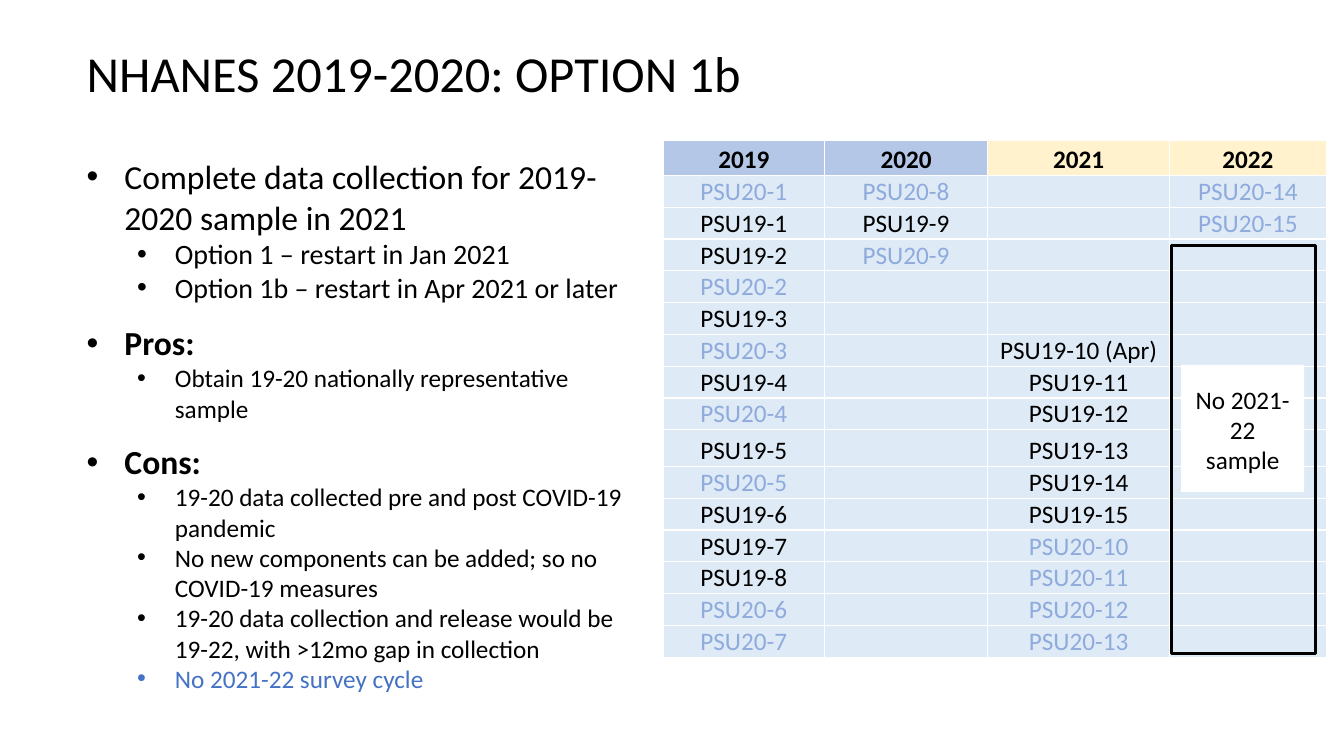
from pptx import Presentation
from pptx.dml.color import RGBColor
from pptx.enum.shapes import MSO_SHAPE
from pptx.enum.text import MSO_ANCHOR, MSO_AUTO_SIZE, PP_ALIGN
from pptx.oxml.ns import qn
from pptx.util import Pt
from lxml.etree import SubElement

PX = 4572
FONT = "Calibri"
BLACK, WHITE, BLUE = "000000", "FFFFFF", "4472C4"
LIGHT_BLUE, PALE_BLUE = "8FAADC", "DEEBF7"

POINTS = [
    (0, "Complete data collection for 2019-2020 sample in 2021", {"size": 24}),
    (1, "Option 1 – restart in Jan 2021", {"size": 20}),
    (1, "Option 1b – restart in Apr 2021 or later", {"size": 20}),
    (0, "Pros:", {"size": 24, "bold": True, "before": 13}),
    (1, "Obtain 19-20 nationally representative sample", {}),
    (0, "Cons:", {"size": 24, "bold": True, "before": 13}),
    (1, "19-20 data collected pre and post COVID-19 pandemic", {}),
    (1, "No new components can be added; so no COVID-19 measures", {}),
    (1, "19-20 data collection and release would be 19-22, with >12mo gap in collection", {}),
    (1, "No 2021-22 survey cycle", {"color": BLUE}),
]

YEARS = [("2019", "B4C7E7"), ("2020", "B4C7E7"), ("2021", "FFF2CC"), ("2022", "FFF2CC")]
SCHEDULE = [
    ["20-1", "19-1", "19-2", "20-2", "19-3", "20-3", "19-4", "20-4",
     "19-5", "20-5", "19-6", "19-7", "19-8", "20-6", "20-7"],
    ["20-8", "19-9", "20-9"],
    [""] * 5 + ["19-10 (Apr)", "19-11", "19-12", "19-13", "19-14", "19-15",
                "20-10", "20-11", "20-12", "20-13"],
    ["20-14", "20-15"],
]
COL_WIDTHS = [320, 324, 361, 311]
ROW_HEIGHTS = [70] + [63] * 8 + [73] + [63] * 6


def px(n):
    """Turn a length in px into EMU."""
    return int(n * PX)


def rgb(value):
    """Turn a hex string into a colour."""
    return RGBColor.from_string(value)


def place(s, box):
    """Move a shape to a box of left, top, width and height."""
    s.left, s.top, s.width, s.height = map(px, box)


def write(p, text, size=18, color=BLACK, bold=False, align=PP_ALIGN.LEFT, before=0):
    """Write one formatted run into a paragraph."""
    p.alignment = align
    p.line_spacing = 1.0
    p.space_before, p.space_after = Pt(before), Pt(0)
    r = p.add_run()
    r.text = text
    r.font.name, r.font.size, r.font.bold = FONT, Pt(size), bold
    r.font.color.rgb = rgb(color)


def add_bullet(p, level):
    """Give a paragraph a round bullet with a hanging indent."""
    p.level = level
    pPr = p._p.get_or_add_pPr()
    pPr.set("marL", str(px(75 + 100 * level)))
    pPr.set("indent", str(px(-75)))
    SubElement(pPr, qn("a:buFont")).set("typeface", "Arial")
    SubElement(pPr, qn("a:buChar")).set("char", "•")


def add_title(slide, box, text):
    """Fill the title placeholder."""
    s = slide.shapes.title
    place(s, box)
    tf = s.text_frame
    tf.auto_size = MSO_AUTO_SIZE.NONE
    tf.vertical_anchor = MSO_ANCHOR.MIDDLE
    write(tf.paragraphs[0], text, size=36)


def add_points(slide, box, points):
    """Fill the body placeholder with a two-level list."""
    s = slide.placeholders[1]
    place(s, box)
    tf = s.text_frame
    tf.auto_size = MSO_AUTO_SIZE.NONE
    tf.vertical_anchor = MSO_ANCHOR.TOP
    for i, (level, text, style) in enumerate(points):
        p = tf.add_paragraph() if i else tf.paragraphs[0]
        write(p, text, **style)
        add_bullet(p, level)


def format_cell(cell, fill):
    """Set the margins, white borders and fill of a table cell."""
    cell.margin_left = cell.margin_right = cell.margin_top = px(2)
    cell.margin_bottom = 0
    cell.vertical_anchor = MSO_ANCHOR.BOTTOM
    tcPr = cell._tc.get_or_add_tcPr()
    for side in ("lnL", "lnR", "lnT", "lnB"):
        ln = SubElement(tcPr, qn("a:" + side), w=str(Pt(1)))
        SubElement(SubElement(ln, qn("a:solidFill")), qn("a:srgbClr"), val=WHITE)
    cell.fill.solid()
    cell.fill.fore_color.rgb = rgb(fill)


def add_schedule(slide, left, top):
    """Draw the table of sampling units by year."""
    tbl = slide.shapes.add_table(
        len(ROW_HEIGHTS), len(COL_WIDTHS), px(left), px(top),
        px(sum(COL_WIDTHS)), px(sum(ROW_HEIGHTS))).table
    tbl.first_row = tbl.horz_banding = False
    for row, height in zip(tbl.rows, ROW_HEIGHTS):
        row.height = px(height)
    for c, ((year, fill), units) in enumerate(zip(YEARS, SCHEDULE)):
        tbl.columns[c].width = px(COL_WIDTHS[c])
        head = tbl.cell(0, c)
        format_cell(head, fill)
        write(head.text_frame.paragraphs[0], year, bold=True, align=PP_ALIGN.CENTER)
        for r in range(1, len(ROW_HEIGHTS)):
            cell = tbl.cell(r, c)
            format_cell(cell, PALE_BLUE)
            unit = units[r - 1] if r <= len(units) else ""
            if unit:
                color = LIGHT_BLUE if unit.startswith("20") else BLACK
                write(cell.text_frame.paragraphs[0], "PSU" + unit,
                      color=color, align=PP_ALIGN.CENTER)


def add_no_sample(slide, box, text):
    """Draw the outlined frame with a white note inside."""
    left, top, width, height = box
    frame, note = (slide.shapes.add_shape(MSO_SHAPE.RECTANGLE, 0, 0, 0, 0) for _ in range(2))
    place(frame, box)
    frame.shadow.inherit = note.shadow.inherit = False
    frame.fill.background()
    frame.line.color.rgb = rgb(BLACK)
    frame.line.width = Pt(2.25)
    place(note, (left + 20, top + 236, width - 42, 252))
    note.fill.solid()
    note.fill.fore_color.rgb = rgb(WHITE)
    note.line.fill.background()
    tf = note.text_frame
    tf.word_wrap = True
    tf.vertical_anchor = MSO_ANCHOR.TOP
    tf.margin_top = px(38)
    write(tf.paragraphs[0], text, align=PP_ALIGN.CENTER)


def main():
    """Build the slide and save it."""
    prs = Presentation()
    prs.slide_width, prs.slide_height = px(2667), px(1500)
    slide = prs.slides.add_slide(prs.slide_layouts[1])
    add_points(slide, (152, 300, 1122, 1162), POINTS)
    add_schedule(slide, 1316, 278)
    add_title(slide, (152, 50, 2314, 186), "NHANES 2019-2020: OPTION 1b")
    add_no_sample(slide, (2324, 488, 286, 808), "No 2021-22 sample")
    prs.save("out.pptx")


if __name__ == "__main__":
    main()
